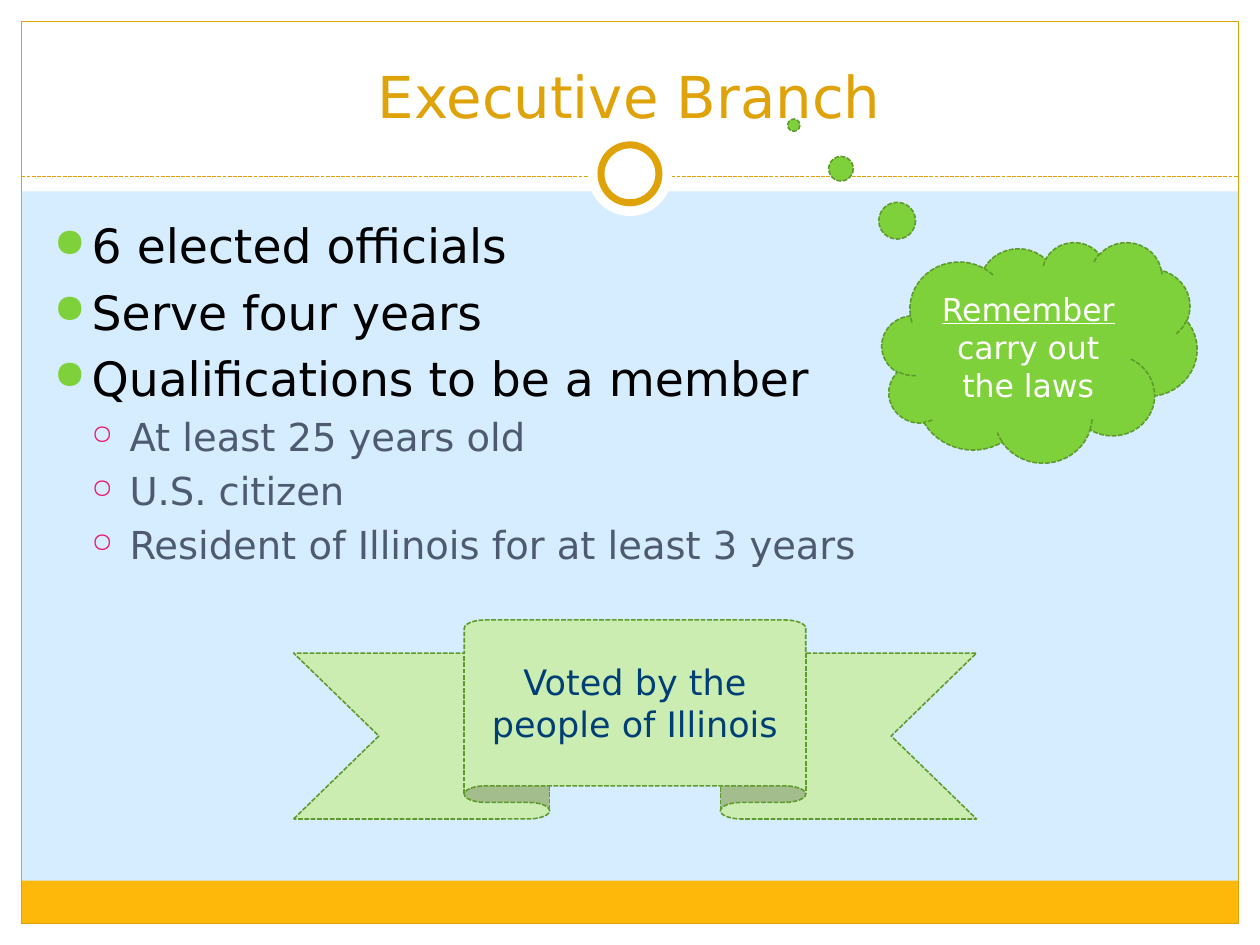
from lxml import etree
from pptx import Presentation
from pptx.dml.color import RGBColor
from pptx.enum.dml import MSO_LINE
from pptx.enum.shapes import MSO_CONNECTOR, MSO_SHAPE
from pptx.enum.text import MSO_ANCHOR, PP_ALIGN
from pptx.oxml.ns import qn
from pptx.util import Inches, Pt

WHITE = RGBColor(0xFF, 0xFF, 0xFF)
BLACK = RGBColor(0, 0, 0)
SKY = RGBColor(0xD6, 0xEC, 0xFF)
AMBER = RGBColor(0xFE, 0xB8, 0x0A)
GOLD = RGBColor(0xE0, 0xA2, 0x09)
GREEN = RGBColor(0x7F, 0xD1, 0x3B)
PALE_GREEN = RGBColor(0xCC, 0xED, 0xB1)
DARK_GREEN = RGBColor(0x5E, 0x9B, 0x2C)
PINK = RGBColor(0xEA, 0x15, 0x7A)
SLATE = RGBColor(0x4E, 0x5B, 0x6F)
NAVY = RGBColor(0x00, 0x3F, 0x75)

RECTANGLE = MSO_SHAPE.RECTANGLE
OVAL = MSO_SHAPE.OVAL
RIBBON = MSO_SHAPE.UP_RIBBON
CLOUD = MSO_SHAPE.CLOUD_CALLOUT
STRAIGHT = MSO_CONNECTOR.STRAIGHT
DASH = MSO_LINE.SQUARE_DOT
CENTER = PP_ALIGN.CENTER
MIDDLE = MSO_ANCHOR.MIDDLE
BOTTOM = MSO_ANCHOR.BOTTOM

FONT = "DejaVu Sans"
WIDTH, HEIGHT, EDGE = 10, 7.5, 0.17
LEVELS = [
    {"size": 27, "color": BLACK, "bullet": "●", "bullet_color": GREEN, "scale": 85},
    {"size": 22, "color": SLATE, "bullet": "○", "bullet_color": PINK, "scale": 70},
]
FACTS = [
    (0, "6 elected officials"),
    (0, "Serve four years"),
    (0, "Qualifications to be a member"),
    (1, "At least 25 years old"),
    (1, "U.S. citizen"),
    (1, "Resident of Illinois for at least 3 years"),
]


def style_line(line, color, width, dash=None):
    """Set the colour, width and optional dash of a line."""
    line.color.rgb = color
    for name, value in {"width": Pt(width), "dash_style": dash}.items():
        setattr(line, name, value)


def add_shape(page, kind, box, fill=None, outline=None):
    """Add a flat shape in the box, in inches."""
    shape = page.shapes.add_shape(kind, *map(Inches, box))
    shape.shadow.inherit = False
    if fill is None:
        shape.fill.background()
    else:
        shape.fill.solid()
        shape.fill.fore_color.rgb = fill
    if outline:
        style_line(shape.line, *outline)
    else:
        shape.line.fill.background()
    return shape


def add_span(para, text, size, color, underline=None):
    """Append one formatted run to a paragraph."""
    span = para.add_run()
    span.text = text
    formats = {"name": FONT, "size": Pt(size), "underline": underline}
    for name, value in formats.items():
        setattr(span.font, name, value)
    span.font.color.rgb = color


def center_text(shape, anchor, spans):
    """Write centred runs in the shape."""
    frame = shape.text_frame
    for name, value in {"word_wrap": True, "vertical_anchor": anchor}.items():
        setattr(frame, name, value)
    para = frame.paragraphs[0]
    para.alignment = CENTER
    for span in spans:
        add_span(para, *span)


def add_child(parent, tag, **attributes):
    """Append a drawing element with its attributes."""
    return etree.SubElement(parent, qn(tag), attributes)


def set_bullet(para, level, style):
    """Give a paragraph its indent, spacing and bullet."""
    settings = para._p.get_or_add_pPr()
    indent = Inches(0.3)
    settings.set("marL", str(indent * (level + 1)))
    settings.set("indent", str(-indent))
    add_child(add_child(settings, "a:spcBef"), "a:spcPct", val="20000")
    color = add_child(settings, "a:buClr")
    add_child(color, "a:srgbClr", val=str(style["bullet_color"]))
    add_child(settings, "a:buSzPct", val=str(style["scale"] * 1000))
    add_child(settings, "a:buChar", char=style["bullet"])


def draw_frame(page, width, height):
    """Draw the white margins, footer band, border and header divider."""
    inner = width - 2 * EDGE
    header, divider, footer = 1.52, 1.4, 0.34
    for box in [
        (0, height - EDGE, width, EDGE),
        (0, 0, width, header),
        (0, 0, EDGE, height),
        (width - EDGE, 0, EDGE, height),
    ]:
        add_shape(page, RECTANGLE, box, WHITE)
    add_shape(page, RECTANGLE, (EDGE, height - EDGE - footer, inner, footer), AMBER)
    border = (EDGE, EDGE, inner, height - 2 * EDGE)
    add_shape(page, RECTANGLE, border, outline=(GOLD, 0.75))
    ends = (EDGE, divider, width - EDGE, divider)
    rule = page.shapes.add_connector(STRAIGHT, *map(Inches, ends))
    style_line(rule.line, GOLD, 0.75, DASH)
    add_child(rule._element.spPr, "a:effectLst")
    for size, outline in [(0.67, None), (0.46, (GOLD, 4))]:
        box = ((width - size) / 2, 1.38 - size / 2, size, size)
        add_shape(page, OVAL, box, WHITE, outline)


def draw_title(page, box):
    """Write the slide title at the bottom of the box."""
    title = page.shapes.add_textbox(*map(Inches, box))
    center_text(title, BOTTOM, [("Executive Branch", 33, GOLD)])


def draw_facts(page, box):
    """Write the two-level bullet list."""
    frame = page.shapes.add_textbox(*map(Inches, box)).text_frame
    frame.word_wrap = True
    for index, (level, text) in enumerate(FACTS):
        para = frame.add_paragraph() if index else frame.paragraphs[0]
        para.level = level
        style = LEVELS[level]
        set_bullet(para, level, style)
        add_span(para, text, style["size"], style["color"])


def draw_ribbon(page, box):
    """Draw the ribbon that says who votes."""
    ribbon = add_shape(page, RIBBON, box, PALE_GREEN, (DARK_GREEN, 0.9, DASH))
    center_text(ribbon, MIDDLE, [("Voted by the people of Illinois", 20, NAVY)])


def draw_reminder(page, box):
    """Draw the thought cloud that trails up to the title."""
    cloud = add_shape(page, CLOUD, box, GREEN, (DARK_GREEN, 0.9, DASH))
    for index, value in enumerate((-0.78, -1.03)):
        cloud.adjustments[index] = value
    spans = [("Remember", 18, WHITE, True), (" carry out the laws", 18, WHITE)]
    center_text(cloud, MIDDLE, spans)


def main():
    """Build and save the slide."""
    deck = Presentation()
    deck.slide_width, deck.slide_height = Inches(WIDTH), Inches(HEIGHT)
    page = deck.slides.add_slide(deck.slide_layouts[6])
    page.background.fill.solid()
    page.background.fill.fore_color.rgb = SKY
    draw_frame(page, WIDTH, HEIGHT)
    draw_title(page, (0.33, 0.25, 9.33, 0.83))
    draw_facts(page, (0.33, 1.67, 9.3, 5))
    draw_ribbon(page, (2.33, 4.92, 5.42, 1.58))
    draw_reminder(page, (7, 1.92, 2.5, 1.75))
    deck.save("out.pptx")


if __name__ == "__main__":
    main()
